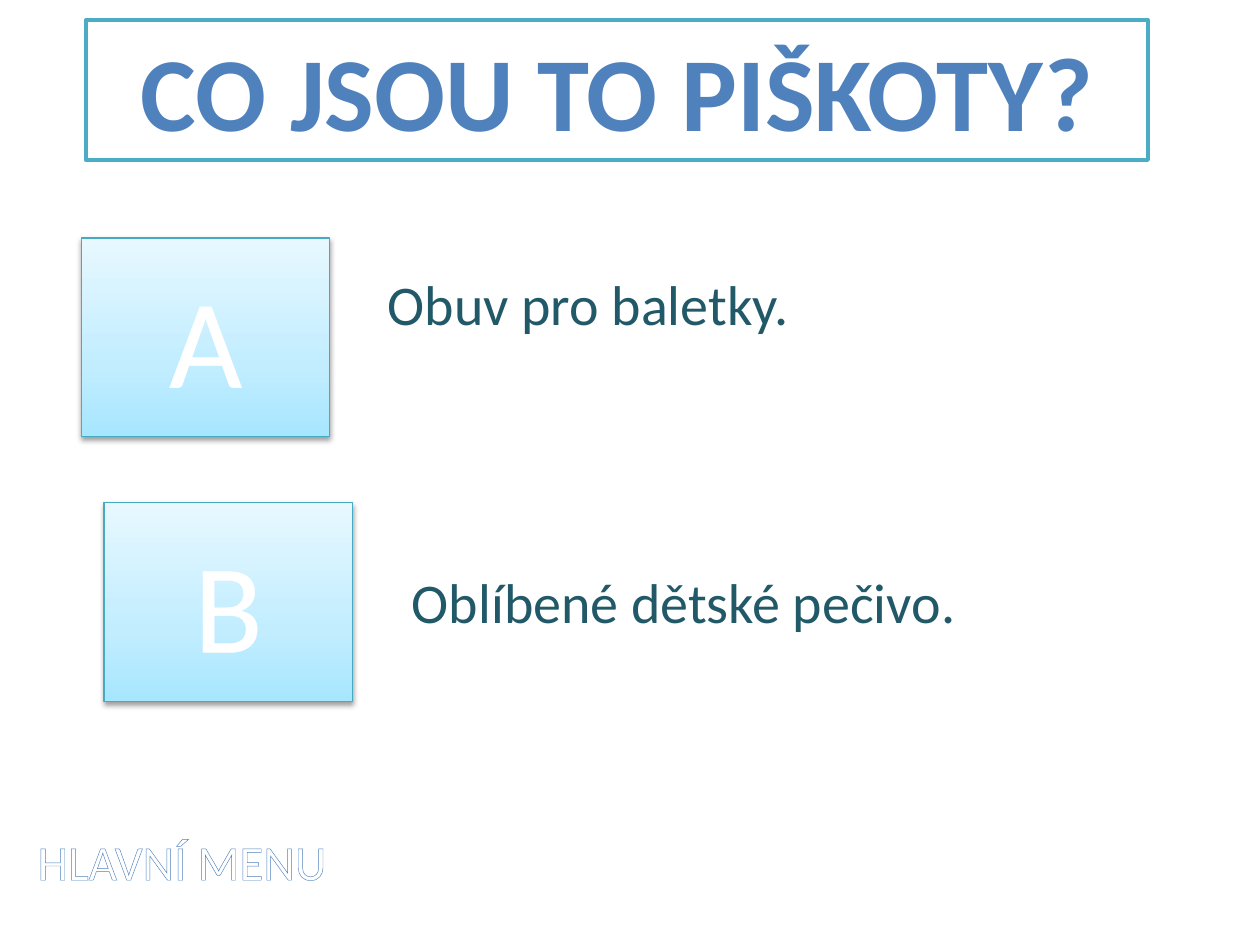
from lxml.etree import fromstring
from pptx import Presentation
from pptx.dml.color import RGBColor
from pptx.enum.shapes import MSO_SHAPE
from pptx.enum.text import MSO_ANCHOR, MSO_AUTO_SIZE, PP_ALIGN
from pptx.oxml.ns import nsdecls
from pptx.util import Pt

TITLE = ("CO JSOU TO PIŠKOTY?", (49, 11.5, 607, 80))
MENU = ("HLAVNÍ MENU", (14.4, 471.5, 206.6, 41))
OPTIONS = [
    ("A", (46.5, 136), "Obuv pro baletky.", (214.5, 150.5, 504.5, 46)),
    ("B", (59.5, 287.3), "Oblíbené dětské pečivo.", (228.3, 320.5, 454, 46)),
]
BUTTON_SIZE = (142, 113.5)

THEME = {
    "font": "Calibri",
    "white": "FFFFFF",
    "blue": "4F81BD",
    "frame": "4BACC6",
    "button_line": "46AAC5",
    "answer": "215968",
    "gradient": [(0, "A7E6FF"), (35, "C1EDFF"), (100, "E7F8FF")],
    "title_size": 60,
    "letter_size": 72,
    "answer_size": 32,
    "menu_size": 28,
}


def color(name):
    return RGBColor.from_string(THEME[name])


def write(shape, text, size, fill, bold=False, align=PP_ALIGN.LEFT,
          anchor=MSO_ANCHOR.TOP, outline=None):
    frame = shape.text_frame
    frame.word_wrap = True
    frame.auto_size = MSO_AUTO_SIZE.NONE
    frame.vertical_anchor = anchor
    paragraph = frame.paragraphs[0]
    paragraph.alignment = align
    run = paragraph.add_run()
    run.text = text
    run.font.name = THEME["font"]
    run.font.size = Pt(THEME[size])
    run.font.bold = bold
    run.font.color.rgb = color(fill)
    if outline:
        name, width = outline
        run.font._element.insert(0, fromstring(
            f'<a:ln {nsdecls("a")} w="{Pt(width)}"><a:solidFill>'
            f'<a:srgbClr val="{THEME[name]}"/></a:solidFill></a:ln>'))


def set_line(shape, name, width):
    shape.line.color.rgb = color(name)
    shape.line.width = Pt(width)


def add_text(slide, text, box, **style):
    write(slide.shapes.add_textbox(*map(Pt, box)), text, **style)


def add_title(slide, text, box):
    title = slide.shapes.title
    title.left, title.top, title.width, title.height = map(Pt, box)
    title.fill.solid()
    title.fill.fore_color.rgb = color("white")
    set_line(title, "frame", 2)
    write(title, text, "title_size", "blue", bold=True, align=PP_ALIGN.CENTER)


def add_button(slide, letter, corner):
    button = slide.shapes.add_shape(
        MSO_SHAPE.RECTANGLE, *map(Pt, corner + BUTTON_SIZE))
    set_line(button, "button_line", 0.75)
    stops = "".join(
        f'<a:gs pos="{position * 1000}"><a:srgbClr val="{rgb}"/></a:gs>'
        for position, rgb in THEME["gradient"])
    properties = button._element.spPr
    properties.find("{*}ln").addprevious(fromstring(
        f'<a:gradFill {nsdecls("a")} rotWithShape="1"><a:gsLst>{stops}</a:gsLst>'
        '<a:lin ang="16200000" scaled="0"/></a:gradFill>'))
    properties.append(fromstring(
        f'<a:effectLst {nsdecls("a")}><a:outerShdw blurRad="{Pt(3.1)}" '
        f'dist="{Pt(1.6)}" dir="5400000" rotWithShape="0">'
        '<a:srgbClr val="000000"><a:alpha val="38000"/></a:srgbClr>'
        '</a:outerShdw></a:effectLst>'))
    write(button, letter, "letter_size", "white", align=PP_ALIGN.CENTER,
          anchor=MSO_ANCHOR.MIDDLE, outline=("white", 1.45))


def main():
    deck = Presentation()
    deck.slide_width, deck.slide_height = Pt(720), Pt(540)
    slide = deck.slides.add_slide(deck.slide_layouts[5])
    add_title(slide, *TITLE)
    add_text(slide, *MENU, size="menu_size", fill="white", outline=("blue", 0.8))
    for letter, corner, answer, box in OPTIONS:
        add_button(slide, letter, corner)
        add_text(slide, answer, box, size="answer_size", fill="answer")
    deck.save("out.pptx")


if __name__ == "__main__":
    main()
